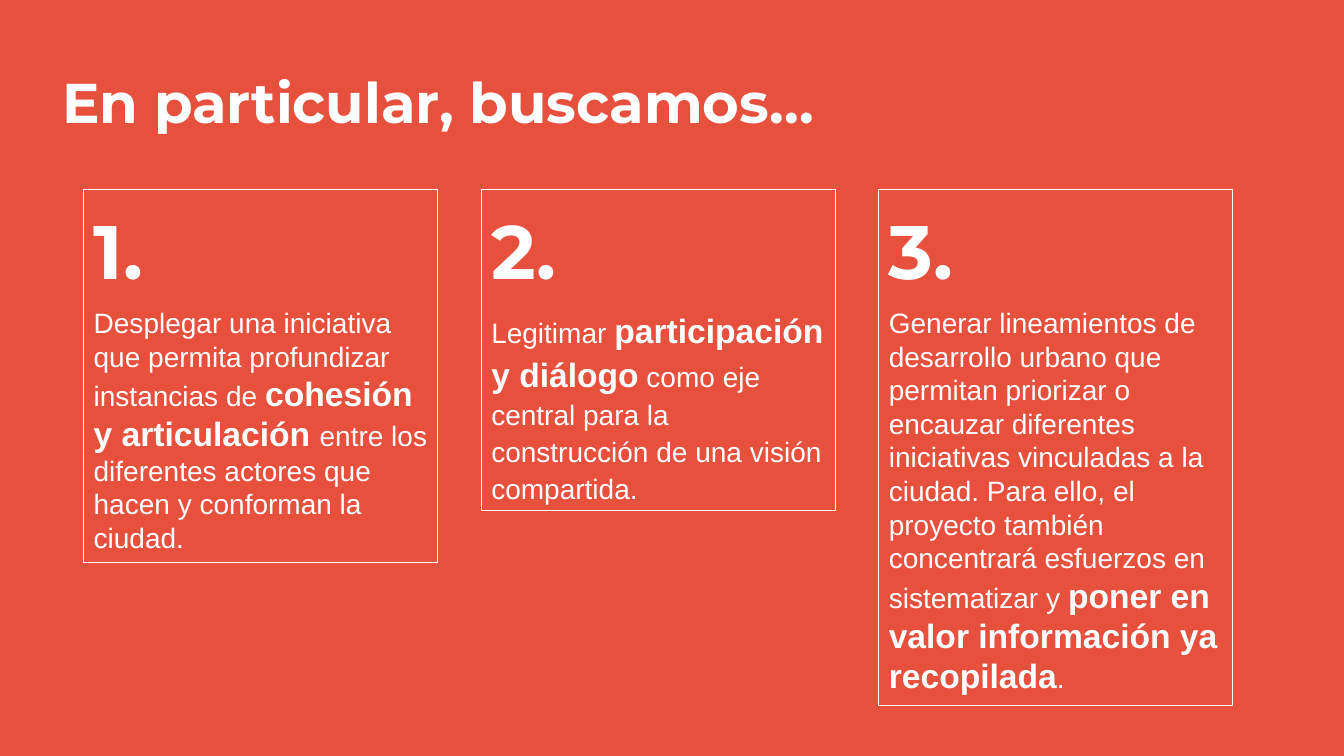
from dataclasses import dataclass

from pptx import Presentation
from pptx import util as u
from pptx.dml.color import RGBColor
from pptx.enum import shapes, text


@dataclass(frozen=True)
class Theme:
    red: RGBColor = RGBColor(0xE6, 0x50, 0x3D)
    white: RGBColor = RGBColor(0xFF, 0xFF, 0xFF)
    heading: str = "Montserrat"
    body: str = "Arial"
    title_size: int = 40
    number_size: int = 54
    strong_size: int = 24
    body_size: int = 20


THEME = Theme()


@dataclass(frozen=True)
class Goal:
    """One column; ** marks the start and end of strong words."""
    height: float
    lines: tuple[str, ...]
    hanging: bool = True


GOALS = (
    Goal(266.4, (
        "Desplegar una iniciativa",
        "que permita profundizar",
        "instancias de **cohesión",
        "**y articulación **entre los",
        "diferentes actores que",
        "hacen y conforman la",
        "ciudad.",
    )),
    Goal(229, (
        "Legitimar **participación y diálogo** como eje central "
        "para la construcción de una visión compartida.",
    ), hanging=False),
    Goal(368.6, (
        "Generar lineamientos de",
        "desarrollo urbano que",
        "permitan priorizar o",
        "encauzar diferentes",
        "iniciativas vinculadas a la",
        "ciudad. Para ello, el",
        "proyecto también",
        "concentrará esfuerzos en",
        "sistematizar y **poner en",
        "**valor información ya",
        "**recopilada**.",
    )),
)

# Column grid, in points
LEFT, TOP, WIDTH, STEP = 59.8, 135.4, 252.7, 284
INDENT = 27


def add_span(para, words: str, *, font: str, size: float, bold: bool = False) -> None:
    span = para.add_run()
    span.text = words
    span.font.name = font
    span.font.size = u.Pt(size)
    span.font.bold = bold
    span.font.color.rgb = THEME.white


def format_para(para, *, hanging: bool, spaced: bool) -> None:
    para.alignment = text.PP_ALIGN.LEFT
    if hanging:
        properties = para._p.get_or_add_pPr()
        properties.set("marL", str(u.Pt(INDENT)))
        properties.set("indent", str(-u.Pt(INDENT)))
    if spaced:
        para.line_spacing = 1.1
        para.space_after = u.Pt(8)


def add_title(page, words: str) -> None:
    box = page.shapes.add_textbox(u.Pt(37.4), u.Pt(44.6), u.Pt(666.7), u.Pt(55.4))
    box.text_frame.word_wrap = True
    add_span(box.text_frame.paragraphs[0], words,
             font=THEME.heading, size=THEME.title_size, bold=True)


def add_goal(page, index: int, goal: Goal) -> None:
    box = page.shapes.add_shape(
        shapes.MSO_SHAPE.RECTANGLE,
        u.Pt(LEFT + index * STEP), u.Pt(TOP), u.Pt(WIDTH), u.Pt(goal.height))
    box.shadow.inherit = False
    box.fill.background()
    box.line.color.rgb = THEME.white
    box.line.width = u.Pt(0.75)
    frame = box.text_frame
    frame.word_wrap = True
    frame.vertical_anchor = text.MSO_ANCHOR.TOP

    # Number
    para = frame.paragraphs[0]
    format_para(para, hanging=True, spaced=True)
    add_span(para, f"{index + 1}.", font=THEME.heading,
             size=THEME.number_size, bold=True)

    # Statement
    for line in goal.lines:
        para = frame.add_paragraph()
        format_para(para, hanging=goal.hanging, spaced=not goal.hanging)
        for part, words in enumerate(line.split("**")):
            strong = part % 2 == 1
            if words:
                add_span(para, words, font=THEME.body, bold=strong,
                         size=THEME.strong_size if strong else THEME.body_size)


def main() -> None:
    deck = Presentation()
    deck.slide_width, deck.slide_height = u.Pt(960), u.Pt(540)
    page = deck.slides.add_slide(deck.slide_layouts[6])
    page.background.fill.solid()
    page.background.fill.fore_color.rgb = THEME.red

    add_title(page, "En particular, buscamos…")
    for index, goal in enumerate(GOALS):
        add_goal(page, index, goal)
    deck.save("out.pptx")


if __name__ == "__main__":
    main()
